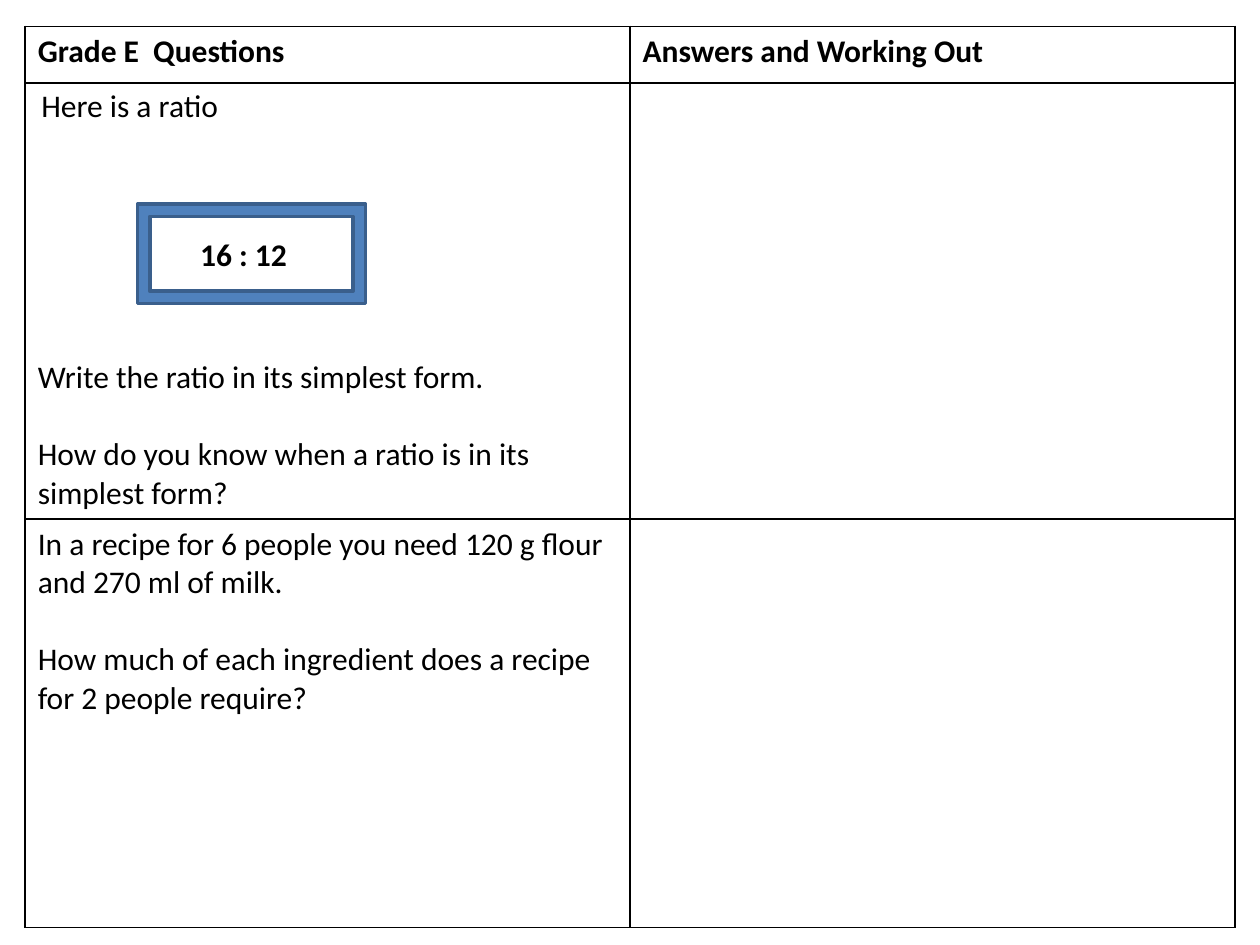
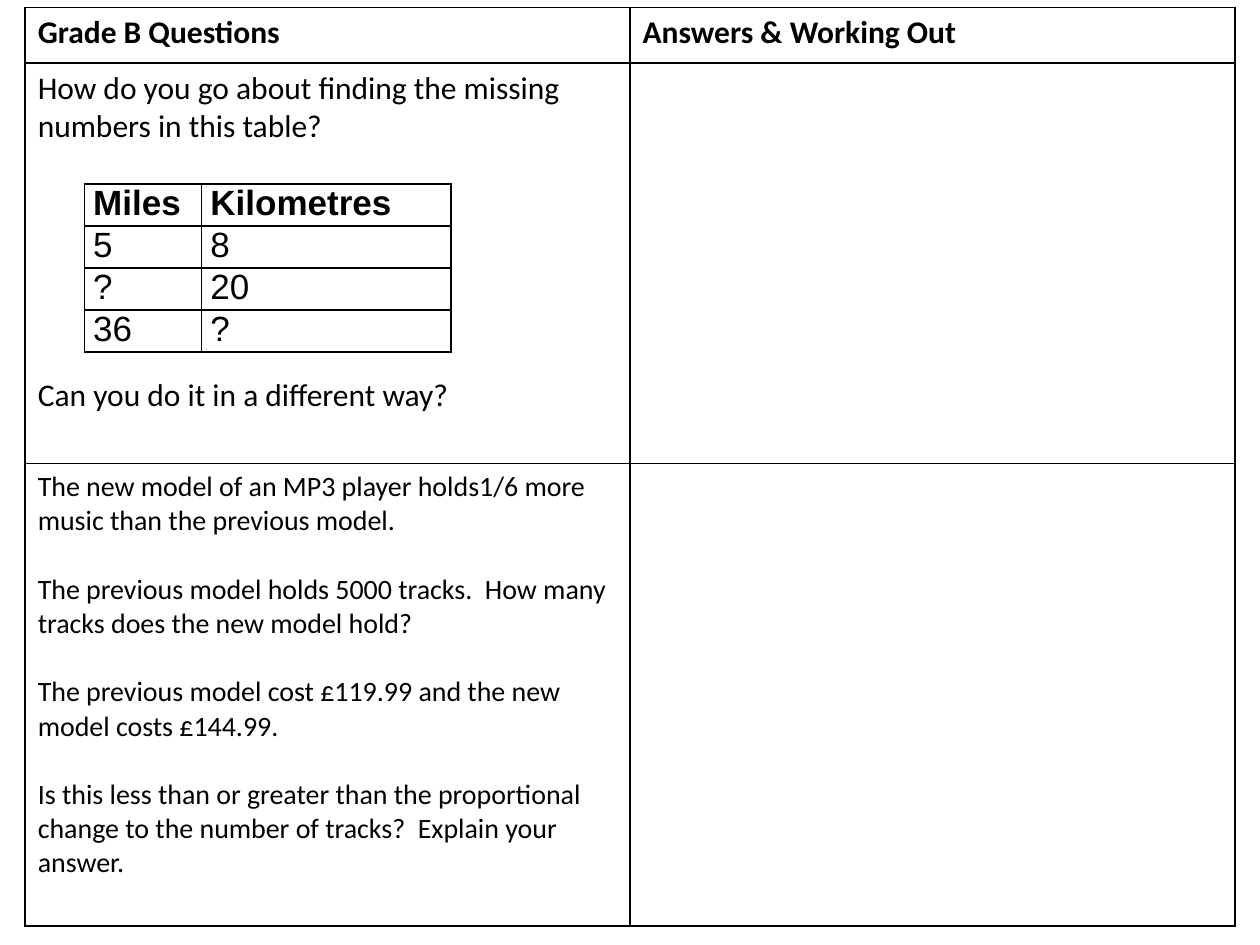
from dataclasses import dataclass

from lxml import etree
from pptx import Presentation
from pptx.dml.color import RGBColor
from pptx.enum.shapes import MSO_SHAPE
from pptx.enum.text import MSO_ANCHOR, MSO_AUTO_SIZE
from pptx.oxml.ns import qn
from pptx.slide import Slide
from pptx.table import Table, _Cell
from pptx.text.text import TextFrame
from pptx.util import Inches, Pt

BLACK, WHITE = "000000", "FFFFFF"
FRAME_FILL, FRAME_LINE = "4F81BD", "3A5F8C"
LINE_HEIGHT = 1.22  # one line of Calibri, as a multiple of its size
BLANK_LAYOUT = 6


@dataclass(frozen=True)
class TextStyle:
    size: int = 18
    bold: bool = False
    font: str = "Calibri"


@dataclass(frozen=True)
class Grid:
    left: float
    top: float
    columns: tuple[float, ...]
    rows: tuple[float, ...]


@dataclass(frozen=True)
class Question:
    """Paragraphs of one question, set apart by a number of free lines."""
    paragraphs: tuple[str, ...]
    style: TextStyle = TextStyle()
    free_lines: int = 1
    anchor: MSO_ANCHOR = MSO_ANCHOR.TOP


@dataclass(frozen=True)
class Worksheet:
    headings: tuple[str, str]
    top: float
    row_heights: tuple[float, ...]
    questions: tuple[Question, ...]


BODY = TextStyle()
HEADING = TextStyle(bold=True)
SMALL = TextStyle(size=16)

GRADE_E = Worksheet(
    ("Grade E  Questions", "Answers and Working Out"), 0.21, (0.45, 3.46, 3.24),
    (
        Question(("Write the ratio in its simplest form.",
                  "How do you know when a ratio is in its simplest form?"),
                 anchor=MSO_ANCHOR.BOTTOM),
        Question(("In a recipe for 6 people you need 120 g flour and 270 ml of milk.",
                  "How much of each ingredient does a recipe for 2 people require?")),
    ),
)
GRADE_B = Worksheet(
    ("Grade B Questions", "Answers & Working Out"), 0.06, (0.44, 3.18, 3.67),
    (
        Question(("How do you go about finding the missing numbers in this table?",
                  "Can you do it in a different way?"), free_lines=6),
        Question(("The new model of an MP3 player holds1/6 more music than the previous model.",
                  "The previous model holds 5000 tracks.  How many tracks does the new model hold?",
                  "The previous model cost £119.99 and the new model costs £144.99.",
                  "Is this less than or greater than the proportional change to the number "
                  "of tracks?  Explain your answer."), SMALL),
    ),
)
DISTANCES = (("Miles", "Kilometres"), ("5", "8"), ("?", "20"), ("36", "?"))


def colour(value: str) -> RGBColor:
    return RGBColor.from_string(value)


def write(frame: TextFrame, paragraphs: tuple[str, ...], style: TextStyle,
          free_lines: int = 0) -> None:
    frame.word_wrap = True
    for index, text in enumerate(paragraphs):
        para = frame.add_paragraph() if index else frame.paragraphs[0]
        para.text = text
        para.font.name = style.font
        para.font.size = Pt(style.size)
        para.font.bold = style.bold
        para.font.color.rgb = colour(BLACK)
        if index:
            para.space_before = Pt(round(free_lines * style.size * LINE_HEIGHT, 1))


def draw_borders(cell: _Cell) -> None:
    properties = cell._tc.get_or_add_tcPr()
    for side in ("a:lnL", "a:lnR", "a:lnT", "a:lnB"):
        line = etree.SubElement(properties, qn(side), w=str(Pt(1)))
        fill = etree.SubElement(line, qn("a:solidFill"))
        etree.SubElement(fill, qn("a:srgbClr"), val=BLACK)


def add_grid(page: Slide, grid: Grid) -> Table:
    """Add an empty table with white cells and thin black borders."""
    table = page.shapes.add_table(
        len(grid.rows), len(grid.columns), Inches(grid.left), Inches(grid.top),
        Inches(sum(grid.columns)), Inches(sum(grid.rows))).table
    table.first_row = table.horz_banding = False
    for column, width in zip(table.columns, grid.columns):
        column.width = Inches(width)
    for row, height in zip(table.rows, grid.rows):
        row.height = Inches(height)
    for cell in table.iter_cells():
        draw_borders(cell)
        cell.fill.solid()
        cell.fill.fore_color.rgb = colour(WHITE)
    return table


def add_worksheet(page: Slide, sheet: Worksheet) -> None:
    table = add_grid(page, Grid(0.2, sheet.top, (4.8, 4.8), sheet.row_heights))
    for column, heading in enumerate(sheet.headings):
        write(table.cell(0, column).text_frame, (heading,), HEADING)
    for row, question in enumerate(sheet.questions, start=1):
        cell = table.cell(row, 0)
        cell.vertical_anchor = question.anchor
        write(cell.text_frame, question.paragraphs, question.style, question.free_lines)


def add_label(page: Slide, text: str, left: float, top: float, width: float,
              style: TextStyle) -> None:
    box = page.shapes.add_textbox(Inches(left), Inches(top), Inches(width), Inches(0.4))
    box.text_frame.auto_size = MSO_AUTO_SIZE.SHAPE_TO_FIT_TEXT
    write(box.text_frame, (text,), style)


def add_ratio(page: Slide) -> None:
    border = page.shapes.add_shape(
        MSO_SHAPE.FRAME, Inches(1.09), Inches(1.62), Inches(1.81), Inches(0.79))
    border.shadow.inherit = False
    border.fill.solid()
    border.fill.fore_color.rgb = colour(FRAME_FILL)
    border.line.color.rgb = colour(FRAME_LINE)
    border.line.width = Pt(2)
    add_label(page, "16 : 12", 1.49, 1.82, 1.02, HEADING)
    add_label(page, "Here is a ratio", 0.23, 0.63, 3.54, BODY)


def add_distances(page: Slide) -> None:
    table = add_grid(page, Grid(0.67, 1.46, (0.93, 1.98), (0.32,) * len(DISTANCES)))
    for row, values in enumerate(DISTANCES):
        for column, value in enumerate(values):
            cell = table.cell(row, column)
            cell.margin_left = cell.margin_right = Inches(0.07)
            cell.margin_top = cell.margin_bottom = 0
            write(cell.text_frame, (value,), TextStyle(20, row == 0, "Arial"))


def main() -> None:
    deck = Presentation()
    deck.slide_width, deck.slide_height = Inches(10), Inches(7.5)
    for sheet, add_example in ((GRADE_E, add_ratio), (GRADE_B, add_distances)):
        page = deck.slides.add_slide(deck.slide_layouts[BLANK_LAYOUT])
        add_worksheet(page, sheet)
        add_example(page)
    deck.save("out.pptx")


if __name__ == "__main__":
    main()
